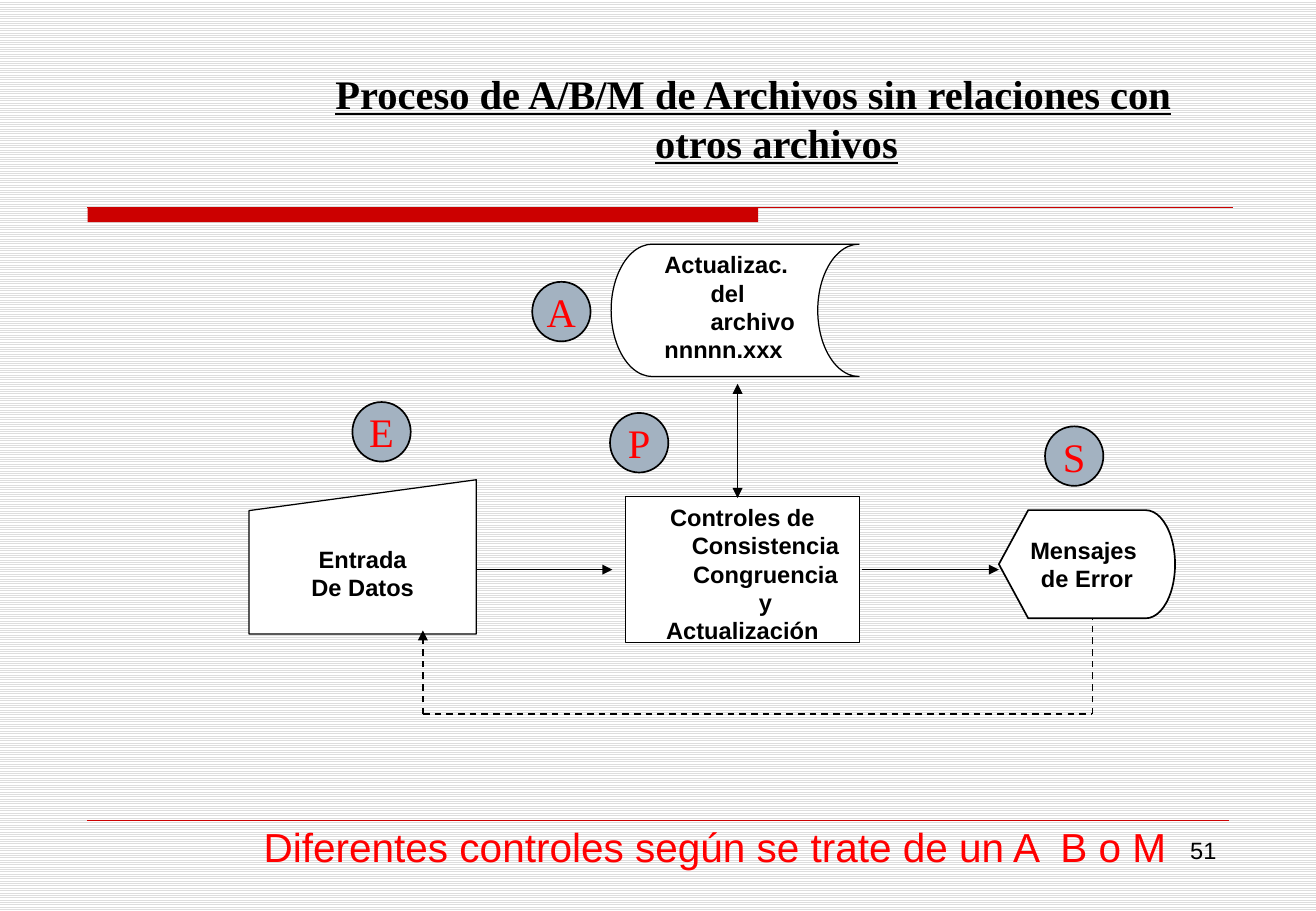
from lxml.etree import SubElement
from pptx import Presentation
from pptx.dml.color import RGBColor
from pptx.enum.dml import MSO_LINE, MSO_PATTERN
from pptx.enum.shapes import MSO_CONNECTOR, MSO_SHAPE
from pptx.enum.text import MSO_ANCHOR, MSO_AUTO_SIZE, PP_ALIGN
from pptx.oxml.ns import qn
from pptx.util import Inches, Pt

BLACK = RGBColor(0x00, 0x00, 0x00)
WHITE = RGBColor(0xFF, 0xFF, 0xFF)
STRIPE = RGBColor(0xDD, 0xDD, 0xDD)
CRIMSON = RGBColor(0xCC, 0x00, 0x00)
RED = RGBColor(0xFF, 0x00, 0x00)
SLATE = RGBColor(0xA3, 0xB2, 0xC1)
SANS = "Arial"
SERIF = "Times New Roman"


class FlowPage:
    """Holds the page and the shared style of the flow diagram."""

    def __init__(self, deck):
        """Add a title-only page with a striped background."""
        self.page = deck.slides.add_slide(deck.slide_layouts[5])
        fill = self.page.background.fill
        fill.patterned()
        fill.pattern = MSO_PATTERN.LIGHT_HORIZONTAL
        fill.fore_color.rgb = STRIPE
        fill.back_color.rgb = WHITE

    def caption(self, box, text, size=14, font=SANS, color=BLACK, bold=False,
                underline=False, align=PP_ALIGN.CENTER, anchor=MSO_ANCHOR.TOP, wrap=True):
        """Fill a box with text in hanging-indent paragraphs."""
        frame = box.text_frame
        frame.text = text
        frame.word_wrap = wrap
        frame.auto_size = MSO_AUTO_SIZE.NONE
        frame.vertical_anchor = anchor
        for para in frame.paragraphs:
            para.alignment = align
            properties = para._p.get_or_add_pPr()
            properties.set("marL", str(Inches(0.38)))
            properties.set("indent", str(Inches(-0.38)))
            for span in para.runs:
                span.font.size = Pt(size)
                span.font.name = font
                span.font.color.rgb = color
                span.font.bold = bold
                span.font.underline = underline

    def title(self, text, left, top, width, height):
        """Place and format the title placeholder."""
        box = self.page.shapes.title
        box.left, box.top = Inches(left), Inches(top)
        box.width, box.height = Inches(width), Inches(height)
        self.caption(box, text, 24, SERIF, bold=True, underline=True)

    def label(self, text, left, top, width, height, **style):
        """Add a text box."""
        box = self.page.shapes.add_textbox(
            Inches(left), Inches(top), Inches(width), Inches(height))
        self.caption(box, text, **style)

    def shape(self, kind, left, top, width, height, fill=WHITE, line=BLACK, weight=0.75):
        """Add a flat preset shape."""
        box = self.page.shapes.add_shape(
            kind, Inches(left), Inches(top), Inches(width), Inches(height))
        box.shadow.inherit = False
        box.fill.solid()
        box.fill.fore_color.rgb = fill
        box.line.color.rgb = line
        box.line.width = Pt(weight)
        return box

    def step(self, kind, text, left, top, width, height, weight=0.75, **style):
        """Add a flowchart step with a bold caption."""
        box = self.shape(kind, left, top, width, height, weight=weight)
        self.caption(box, text, bold=True, **style)
        return box

    def badge(self, letter, left, top):
        """Add a round marker with a red letter."""
        box = self.shape(MSO_SHAPE.OVAL, left, top, 0.48, 0.49, SLATE, weight=1)
        self.caption(box, letter, 24, SERIF, RED, anchor=MSO_ANCHOR.MIDDLE, wrap=False)

    def line(self, start, end, color=BLACK, weight=0.75, dashed=False, heads=()):
        """Add a straight line with optional arrowheads."""
        link = self.page.shapes.add_connector(
            MSO_CONNECTOR.STRAIGHT, *(Inches(value) for value in start + end))
        link.line.color.rgb = color
        link.line.width = Pt(weight)
        if dashed:
            link.line.dash_style = MSO_LINE.DASH
        outline = link.line._get_or_add_ln()
        for head in heads:
            SubElement(outline, qn(f"a:{head}"), type="triangle")
        SubElement(link._element.spPr, qn("a:effectLst"))


def main():
    """Build the page and save the deck."""
    deck = Presentation()
    deck.slide_width, deck.slide_height = Inches(10.83), Inches(7.5)
    flow = FlowPage(deck)

    flow.shape(MSO_SHAPE.RECTANGLE, 0.72, 1.71, 5.52, 0.12, CRIMSON).line.fill.background()
    flow.line((0.72, 1.71), (10.15, 1.71), CRIMSON)
    flow.line((0.72, 6.75), (10.11, 6.75), CRIMSON, 0.25)
    flow.label("51", 7.76, 6.83, 2.35, 0.52, align=PP_ALIGN.RIGHT)

    entry = flow.step(MSO_SHAPE.FLOWCHART_MANUAL_INPUT, "Entrada\nDe Datos",
                      2.05, 3.95, 1.87, 1.27)
    entry.text_frame.margin_top = Inches(0.28)
    flow.step(MSO_SHAPE.FLOWCHART_PROCESS,
              "Controles de Consistencia Congruencia y\nActualización",
              5.15, 4.09, 1.92, 1.2)
    flow.step(MSO_SHAPE.FLOWCHART_STORED_DATA, "Actualizac. del archivo\nnnnnn.xxx",
              5.03, 2.01, 2.04, 1.09, align=PP_ALIGN.JUSTIFY)
    flow.step(MSO_SHAPE.FLOWCHART_DISPLAY, "Mensajes \nde Error",
              8.22, 4.2, 1.45, 0.89, weight=1, anchor=MSO_ANCHOR.MIDDLE, wrap=False)

    flow.line((3.92, 4.69), (5.04, 4.69), heads=["tailEnd"])
    flow.line((7.09, 4.69), (8.22, 4.69), heads=["tailEnd"])
    flow.line((6.07, 3.16), (6.07, 4.1), heads=["headEnd", "tailEnd"])
    flow.line((3.48, 5.88), (8.99, 5.88), weight=1, dashed=True)
    flow.line((8.99, 5.88), (8.99, 5.09), weight=1, dashed=True)
    flow.line((3.48, 5.88), (3.48, 5.19), weight=1, dashed=True, heads=["tailEnd"])

    for letter, left, top in [("E", 2.9, 3.31), ("P", 5.02, 3.4),
                              ("S", 8.6, 3.51), ("A", 4.38, 2.32)]:
        flow.badge(letter, left, top)

    flow.title("Proceso de A/B/M de Archivos sin relaciones con otros archivos",
               2.5, 0.52, 7.4, 0.9)
    flow.label("Diferentes controles según se trate de un A  B o M",
               1.87, 6.72, 8.03, 0.5, size=24, color=RED)
    deck.save("out.pptx")


if __name__ == "__main__":
    main()
